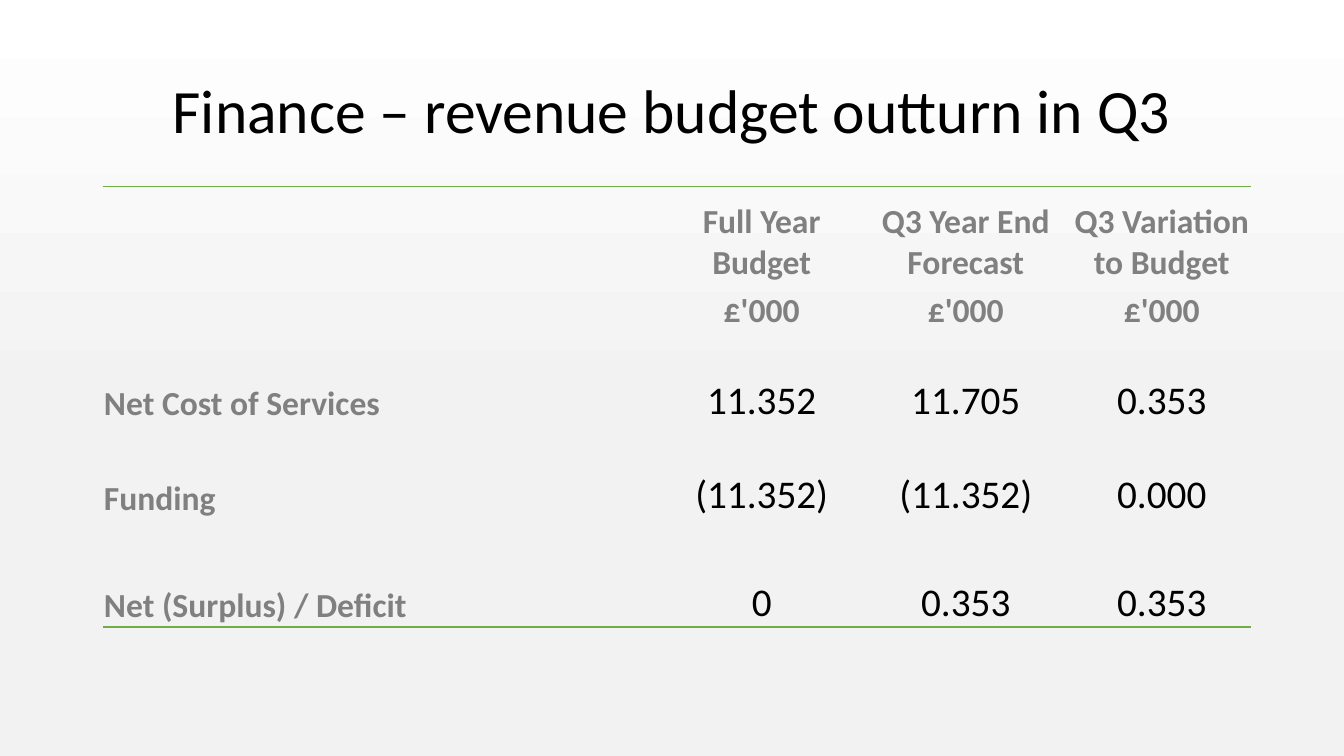
import copy

import pptx
import pptx.dml.color
import pptx.enum.text
import pptx.oxml
import pptx.oxml.ns
import pptx.util

Pt = pptx.util.Pt
ALIGN = pptx.enum.text.PP_ALIGN
ANCHOR = pptx.enum.text.MSO_ANCHOR

TITLE = "Finance – revenue budget outturn in Q3"
EMPTY = ["", "", "", ""]
ROWS = [
    ["", "Full Year Budget", "Q3 Year End Forecast", "Q3 Variation to Budget"],
    ["", "£'000", "£'000", "£'000"],
    EMPTY,
    ["Net Cost of Services", "11.352", "11.705", "0.353"],
    ["Funding", "(11.352)", "(11.352)", "0.000"],
    EMPTY,
    ["Net (Surplus) / Deficit", "0", "0.353", "0.353"],
]
HEADER_ROWS = 2
COL_WIDTHS = [401, 139, 152.6, 127.4]
ROW_HEIGHTS = [69.1, 34.6, 31.7, 34.6, 67.7, 42.5, 34.6]
COLORS = {"title": "000000", "value": "000000", "label": "808080", "rule": "70AD47",
          "bg_top": "FFFFFF", "bg": "F2F2F2"}
FONT = "Calibri"
NO_GRID_STYLE = "{2D5ABB26-0587-4C30-8999-92F81FD0307C}"


def rgb(name):
    return pptx.dml.color.RGBColor.from_string(COLORS[name])


def add_text(p, text, size, color, bold=False, align=ALIGN.CENTER):
    p.alignment = align
    r = p.add_run()
    r.text = text
    r.font.name, r.font.size, r.font.bold = FONT, Pt(size), bold
    r.font.color.rgb = rgb(color)


def add_rule(cell, side):
    """Draw a 1 pt border on one side of a cell: T or B."""
    ln = pptx.oxml.parse_xml(
        f'<a:ln{side} {pptx.oxml.ns.nsdecls("a")} w="{Pt(1)}"><a:solidFill>'
        f'<a:srgbClr val="{COLORS["rule"]}"/></a:solidFill></a:ln{side}>')
    cell._tc.get_or_add_tcPr().insert(0, ln)


def fill_background(slide):
    fill = slide.background.fill
    fill.gradient()
    fill.gradient_angle = 270
    first, last = fill.gradient_stops
    first.color.rgb, first.position = rgb("bg_top"), 0
    last.color.rgb, last.position = rgb("bg"), 1
    middle = copy.deepcopy(last._gs)
    middle.set("pos", "54000")
    last._gs.addprevious(middle)


def add_title(slide):
    tf = slide.shapes.add_textbox(Pt(66), Pt(28.8), Pt(828), Pt(104.4)).text_frame
    tf.word_wrap = True
    tf.vertical_anchor = ANCHOR.MIDDLE
    tf.paragraphs[0].line_spacing = 0.9
    add_text(tf.paragraphs[0], TITLE, 44, "title")


def add_budget_table(slide):
    table = slide.shapes.add_table(len(ROWS), len(COL_WIDTHS), Pt(73.6), Pt(133.2),
                                   Pt(sum(COL_WIDTHS)), Pt(sum(ROW_HEIGHTS))).table
    table.first_row = table.horz_banding = False
    table._tbl.tblPr.find(pptx.oxml.ns.qn("a:tableStyleId")).text = NO_GRID_STYLE
    for col, width in zip(table.columns, COL_WIDTHS):
        col.width = Pt(width)
    for i, (row, height) in enumerate(zip(ROWS, ROW_HEIGHTS)):
        table.rows[i].height = Pt(height)
        for j, text in enumerate(row):
            cell = table.cell(i, j)
            cell.fill.background()
            cell.vertical_anchor = ANCHOR.BOTTOM
            cell.margin_left = cell.margin_right = cell.margin_top = Pt(0.7)
            cell.margin_bottom = 0
            if i == 0:
                add_rule(cell, "T")
            elif i == len(ROWS) - 1:
                add_rule(cell, "B")
            if not text:
                continue
            p = cell.text_frame.paragraphs[0]
            if i < HEADER_ROWS or j == 0:
                add_text(p, text, 24, "label", True, ALIGN.CENTER if j else ALIGN.LEFT)
            else:
                add_text(p, text, 28, "value")


def main():
    prs = pptx.Presentation()
    prs.slide_width, prs.slide_height = Pt(960), Pt(540)
    slide = prs.slides.add_slide(prs.slide_layouts[6])
    fill_background(slide)
    add_title(slide)
    add_budget_table(slide)
    prs.save("out.pptx")


if __name__ == "__main__":
    main()
